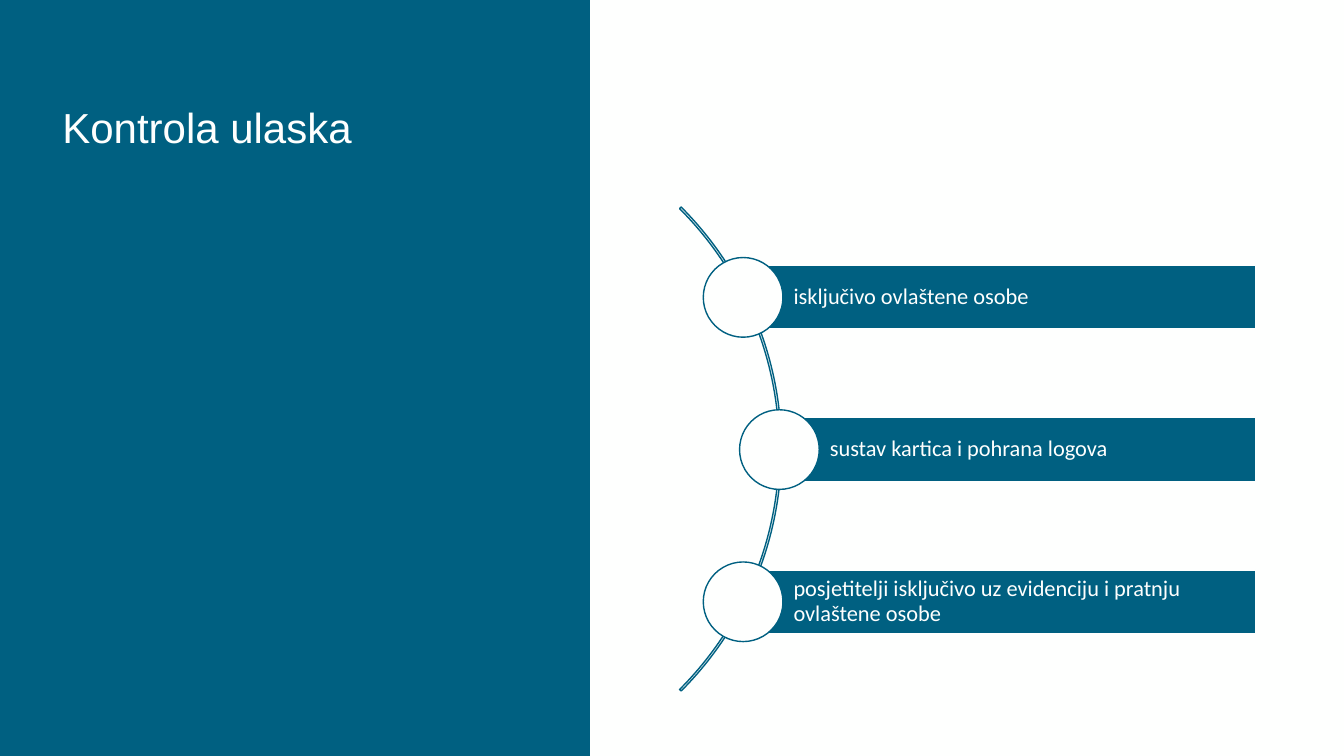
from dataclasses import dataclass

from pptx import Presentation
from pptx.dml.color import RGBColor
from pptx.enum.shapes import MSO_SHAPE
from pptx.enum.text import MSO_ANCHOR, PP_ALIGN
from pptx.shapes.autoshape import Shape
from pptx.slide import Slide
from pptx.util import Inches, Pt

RECTANGLE, OVAL, BLOCK_ARC = MSO_SHAPE.RECTANGLE, MSO_SHAPE.OVAL, MSO_SHAPE.BLOCK_ARC
MIDDLE, BOTTOM = MSO_ANCHOR.MIDDLE, MSO_ANCHOR.BOTTOM
LEFT = PP_ALIGN.LEFT


@dataclass(frozen=True)
class Theme:
    teal: RGBColor = RGBColor(0x00, 0x60, 0x81)
    white: RGBColor = RGBColor(0xFE, 0xFF, 0xFE)
    title_font: str = "Arial"
    body_font: str = "Calibri"
    title_size: int = 30
    body_size: int = 16
    line_width: int = 1


@dataclass(frozen=True)
class Area:
    left: float
    top: float
    width: float
    height: float


@dataclass(frozen=True)
class Rule:
    text: str
    center_x: float


THEME = Theme()
RULES = [
    Rule("isključivo ovlaštene osobe", 7.37),
    Rule("sustav kartica i pohrana logova", 7.73),
    Rule("posjetitelji isključivo uz evidenciju i pratnju ovlaštene osobe", 7.37),
]
FIRST_CENTER_Y, ROW_PITCH = 2.95, 1.51
BAR_RIGHT, BAR_HEIGHT, CIRCLE_SIZE = 12.45, 0.63, 0.79
PANEL = Area(0, 0, 5.85, 7.5)
TITLE = Area(0.52, 0.52, 4.78, 1.04)
ARC = Area(0.96, 1.06, 6.79, 6.79)
ARC_ADJUSTMENTS = (189, 27, 0.0032)


def add_figure(page: Slide, kind: MSO_SHAPE, area: Area, fill: RGBColor,
               outline: RGBColor | None = None) -> Shape:
    figure = page.shapes.add_shape(
        kind, Inches(area.left), Inches(area.top), Inches(area.width), Inches(area.height))
    figure.shadow.inherit = False
    figure.fill.solid()
    figure.fill.fore_color.rgb = fill
    if outline is None:
        figure.line.fill.background()
    else:
        figure.line.color.rgb = outline
        figure.line.width = Pt(THEME.line_width)
    return figure


def write_text(box: Shape, text: str, font: str, size: int, anchor: MSO_ANCHOR,
               insets: tuple[float, float, float, float]) -> None:
    """Fill a shape with white text; insets run left, top, right, bottom."""
    frame = box.text_frame
    frame.text = text
    frame.word_wrap = True
    frame.vertical_anchor = anchor
    (frame.margin_left, frame.margin_top,
     frame.margin_right, frame.margin_bottom) = map(Inches, insets)
    para = frame.paragraphs[0]
    para.alignment = LEFT
    para.line_spacing = 0.9
    para.font.name = font
    para.font.size = Pt(size)
    para.font.color.rgb = THEME.white


def add_title(page: Slide) -> None:
    box = page.shapes.add_textbox(
        Inches(TITLE.left), Inches(TITLE.top), Inches(TITLE.width), Inches(TITLE.height))
    write_text(box, "Kontrola ulaska", THEME.title_font, THEME.title_size,
               BOTTOM, (0.1, 0.05, 0.1, 0.05))


def add_arc(page: Slide) -> None:
    arc = add_figure(page, BLOCK_ARC, ARC, THEME.white, THEME.teal)
    for index, value in enumerate(ARC_ADJUSTMENTS):
        arc.adjustments[index] = value


def add_rule(page: Slide, rule: Rule, center_y: float) -> None:
    """Draw a labelled bar with a circle centred on its left end."""
    bar_area = Area(rule.center_x, center_y - BAR_HEIGHT / 2,
                    BAR_RIGHT - rule.center_x, BAR_HEIGHT)
    bar = add_figure(page, RECTANGLE, bar_area, THEME.teal, THEME.white)
    write_text(bar, rule.text, THEME.body_font, THEME.body_size,
               MIDDLE, (0.5, 0.04, 0.04, 0.04))
    radius = CIRCLE_SIZE / 2
    circle_area = Area(rule.center_x - radius, center_y - radius, CIRCLE_SIZE, CIRCLE_SIZE)
    add_figure(page, OVAL, circle_area, THEME.white, THEME.teal)


def main() -> None:
    deck = Presentation()
    deck.slide_width, deck.slide_height = Inches(13.33), Inches(7.5)
    page = deck.slides.add_slide(deck.slide_layouts[6])
    page.background.fill.solid()
    page.background.fill.fore_color.rgb = THEME.white
    add_figure(page, RECTANGLE, PANEL, THEME.teal)
    add_title(page)
    add_arc(page)
    for row, rule in enumerate(RULES):
        add_rule(page, rule, FIRST_CENTER_Y + row * ROW_PITCH)
    deck.save("out.pptx")


if __name__ == "__main__":
    main()
